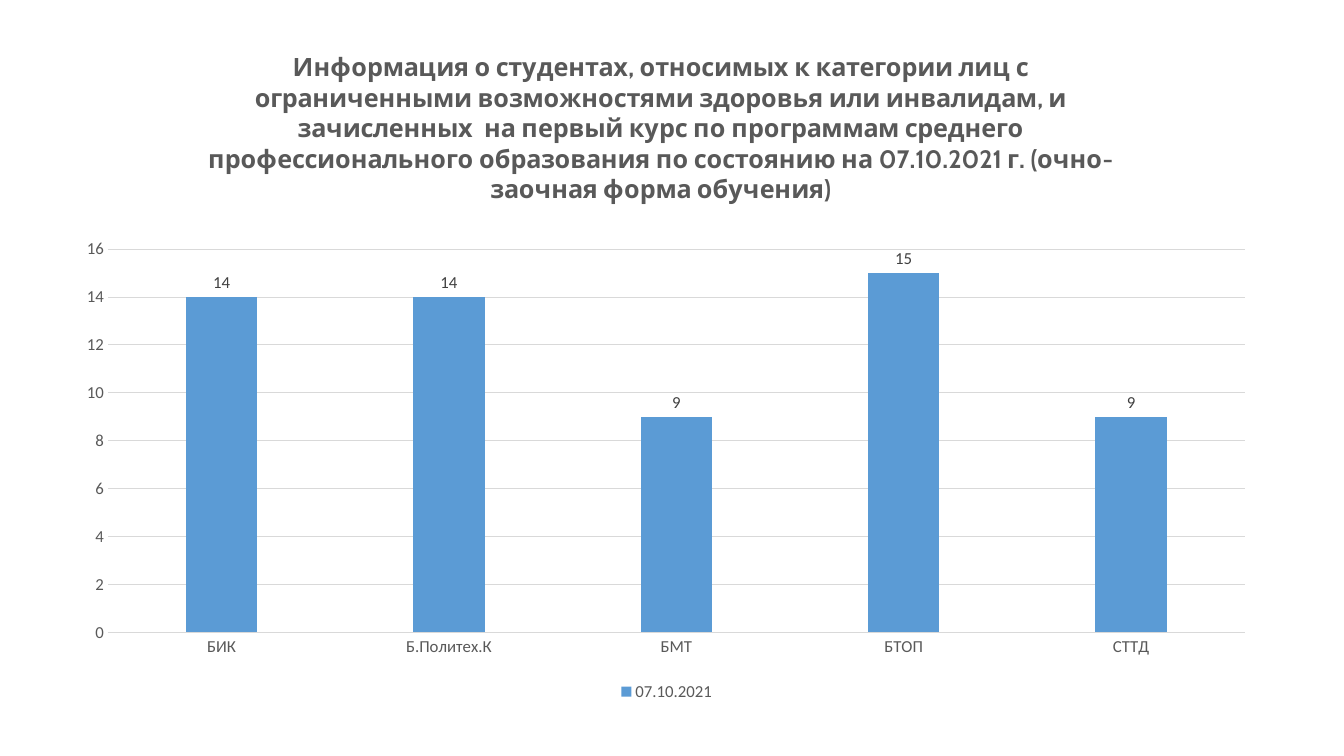
from lxml.etree import SubElement
from pptx import Presentation
from pptx.chart.data import CategoryChartData
from pptx.dml.color import RGBColor
from pptx.enum.chart import (
    XL_CHART_TYPE as ChartType,
    XL_LABEL_POSITION as LabelPosition,
    XL_LEGEND_POSITION as LegendPosition,
    XL_TICK_MARK as TickMark,
)
from pptx.oxml.ns import qn
from pptx.util import Cm, Pt

TITLE = (
    "Информация о студентах, относимых к категории лиц с ограниченными "
    "возможностями здоровья или инвалидам, и зачисленных  на первый курс "
    "по программам среднего профессионального образования по состоянию "
    "на 07.10.2021 г. (очно-заочная форма обучения)"
)
SERIES_NAME = "07.10.2021"
STUDENTS = {"БИК": 14, "Б.Политех.К": 14, "БМТ": 9, "БТОП": 15, "СТТД": 9}

SLIDE_SIZE = Cm(33.87), Cm(19.05)
CHART_BOX = Cm(1.6), Cm(1.14), Cm(30.4), Cm(16.64)
# Places inside the chart box
TITLE_PLACE = {"x": Cm(3.53), "y": Cm(0)}
PLOT_PLACE = {"x": Cm(1.12), "y": Cm(5.14), "w": Cm(28.65), "h": Cm(9.66)}


class Theme:
    bar = RGBColor(0x5B, 0x9B, 0xD5)
    grid = RGBColor(0xD9, 0xD9, 0xD9)
    text = RGBColor(0x59, 0x59, 0x59)
    label = RGBColor(0x40, 0x40, 0x40)
    hairline = Pt(0.75)
    title_font = {"name": "Cabin", "size": Pt(18), "bold": True}
    text_font = {"name": "Calibri", "size": Pt(12), "bold": False}


def set_attributes(target, values):
    for name, value in values.items():
        setattr(target, name, value)


def style_font(font, values, color):
    set_attributes(font, values)
    font.color.rgb = color


def style_line(line):
    line.color.rgb = Theme.grid
    line.width = Theme.hairline


def place_in_chart(element, place, position, inner=False):
    """Fix a chart part at lengths measured from the chart's top left corner."""
    for layout in element.findall(qn("c:layout")):
        element.remove(layout)
    layout = SubElement(element, qn("c:layout"))
    element.insert(position, layout)
    manual = SubElement(layout, qn("c:manualLayout"))
    settings = {"layoutTarget": "inner"} if inner else {}
    settings |= {"xMode": "edge", "yMode": "edge"}
    width, height = CHART_BOX[2:]
    for name, length in place.items():
        settings[name] = str(length / (width if name in "xw" else height))
    for name, value in settings.items():
        SubElement(manual, qn(f"c:{name}")).set("val", value)


def style_title(chart):
    chart.has_title = True
    title = chart.chart_title
    frame = title.text_frame
    frame.text = TITLE
    style_font(frame.paragraphs[0].runs[0].font, Theme.title_font, Theme.text)
    title.include_in_layout = False
    place_in_chart(title._element, TITLE_PLACE, position=1)


def style_axes(chart):
    for axis in (chart.category_axis, chart.value_axis):
        set_attributes(axis, {"major_tick_mark": TickMark.NONE,
                              "minor_tick_mark": TickMark.NONE})
        style_font(axis.tick_labels.font, Theme.text_font, Theme.text)
    style_line(chart.category_axis.format.line)

    value_axis = chart.value_axis
    set_attributes(value_axis, {"minimum_scale": 0, "maximum_scale": 16,
                                "major_unit": 2, "has_major_gridlines": True})
    value_axis.format.line.fill.background()
    style_line(value_axis.major_gridlines.format.line)


def style_bars(chart):
    plot = chart.plots[0]
    set_attributes(plot, {"gap_width": 219, "overlap": -27,
                          "vary_by_categories": False,
                          "has_data_labels": True})
    fill = plot.series[0].format.fill
    fill.solid()
    fill.fore_color.rgb = Theme.bar
    set_attributes(plot.data_labels, {"show_value": True,
                                      "position": LabelPosition.OUTSIDE_END})
    style_font(plot.data_labels.font, Theme.text_font, Theme.label)
    plot_area = chart._chartSpace.chart.plotArea
    place_in_chart(plot_area, PLOT_PLACE, position=0, inner=True)


def style_legend(chart):
    chart.has_legend = True
    set_attributes(chart.legend, {"position": LegendPosition.BOTTOM,
                                  "include_in_layout": False})
    style_font(chart.legend.font, Theme.text_font, Theme.text)


def add_students_chart(slide):
    data = CategoryChartData()
    data.categories = list(STUDENTS)
    data.add_series(SERIES_NAME, list(STUDENTS.values()))
    chart = slide.shapes.add_chart(
        ChartType.COLUMN_CLUSTERED, *CHART_BOX, data).chart
    style_font(chart.font, Theme.text_font, Theme.text)
    for style_part in (style_title, style_axes, style_bars, style_legend):
        style_part(chart)


def main():
    presentation = Presentation()
    presentation.slide_width, presentation.slide_height = SLIDE_SIZE
    blank_layout = presentation.slide_layouts[6]
    add_students_chart(presentation.slides.add_slide(blank_layout))
    presentation.save("out.pptx")


if __name__ == "__main__":
    main()
